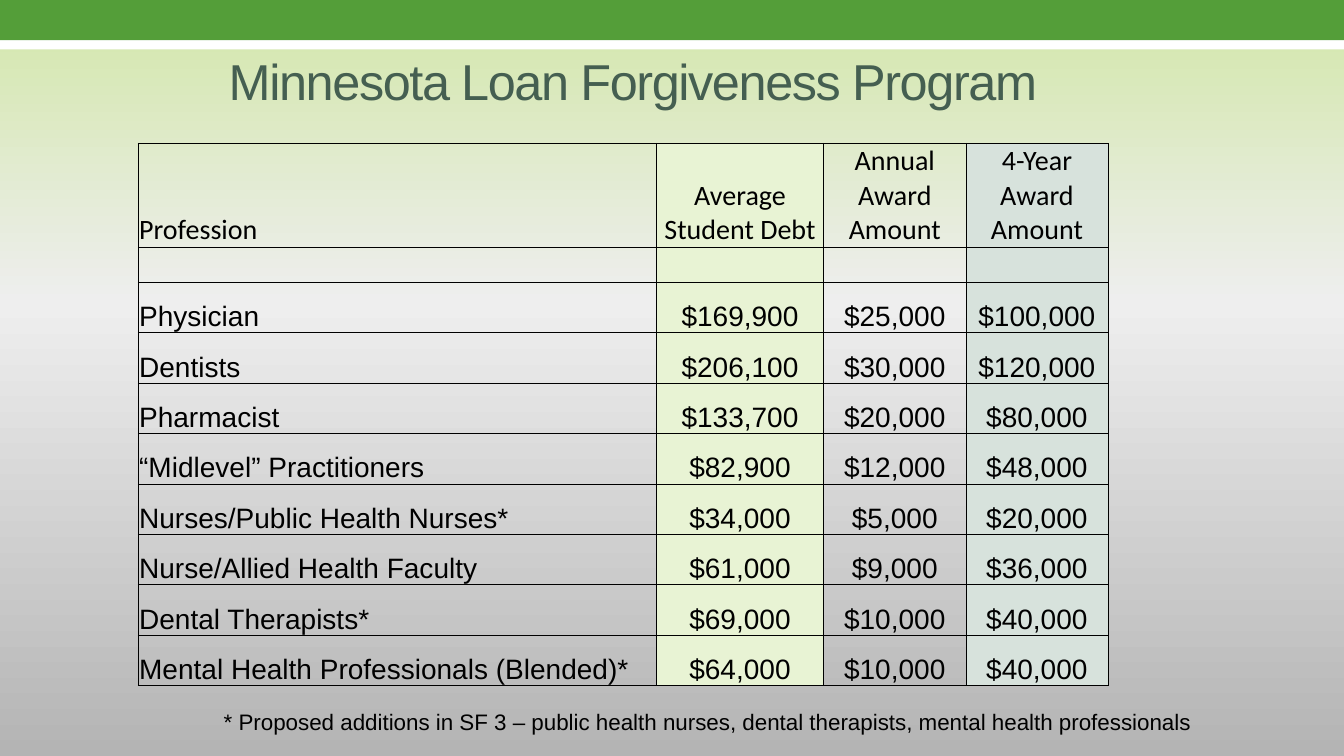
from pptx import Presentation
from pptx import util as u
from pptx.dml.color import RGBColor
from pptx.enum import shapes, text
from pptx.oxml import parse_xml
from pptx.oxml.ns import nsdecls, qn
from copy import deepcopy

BLACK = "000000"
COLUMN_WIDTHS = [5.14, 1.66, 1.41, 1.41]
COLUMN_FILLS = [None, "E8F3D4", None, "D7E2DC"]
HEADER = ["Profession", "Average Student Debt", "Annual\nAward Amount", "4-Year Award Amount"]
AWARDS = [
    ["Physician", "$169,900", "$25,000", "$100,000"],
    ["Dentists", "$206,100", "$30,000", "$120,000"],
    ["Pharmacist", "$133,700", "$20,000", "$80,000"],
    ["“Midlevel” Practitioners", "$82,900", "$12,000", "$48,000"],
    ["Nurses/Public Health Nurses*", "$34,000", "$5,000", "$20,000"],
    ["Nurse/Allied Health Faculty", "$61,000", "$9,000", "$36,000"],
    ["Dental Therapists*", "$69,000", "$10,000", "$40,000"],
    ["Mental Health Professionals (Blended)*", "$64,000", "$10,000", "$40,000"],
]


def color(value):
    return RGBColor.from_string(value)


def set_attributes(target, values):
    for name, value in values.items():
        setattr(target, name, value)


class SlideBuilder:
    def __init__(self, slide, font="Arial"):
        self.slide = slide
        self.font = font

    def background(self, stops):
        """Fill the background from top to bottom with (position, color) stops."""
        fill = self.slide.background.fill
        fill.gradient()
        fill.gradient_angle = 270
        stop_list = next(self.slide.element.iter(qn("a:gsLst")))
        while len(stop_list) < len(stops):
            stop_list.append(deepcopy(stop_list[0]))
        for stop, (position, value) in zip(fill.gradient_stops, stops):
            stop.position = position
            stop.color.rgb = color(value)

    def band(self, top, height, fill):
        shape = self.slide.shapes.add_shape(
            shapes.MSO_SHAPE.RECTANGLE, 0, u.Inches(top), u.Inches(13.33), u.Inches(height))
        shape.shadow.inherit = False
        shape.fill.solid()
        shape.fill.fore_color.rgb = color(fill)
        shape.line.fill.background()

    def fill_text(self, frame, content, size, value=BLACK, font=None, align=text.PP_ALIGN.LEFT):
        frame.text = content
        for paragraph in frame.paragraphs:
            paragraph.alignment = align
            for run in paragraph.runs:
                set_attributes(run.font, {
                    "name": font or self.font, "size": u.Pt(size), "bold": False})
                run.font.color.rgb = color(value)

    def label(self, box, content, size, value=BLACK, anchor=text.MSO_ANCHOR.TOP, spacing=0):
        shape = self.slide.shapes.add_textbox(*map(u.Inches, box))
        set_attributes(shape.text_frame, {"word_wrap": True, "vertical_anchor": anchor})
        self.fill_text(shape.text_frame, content, size, value)
        if spacing:
            for properties in shape.element.iter(qn("a:rPr")):
                properties.set("spc", str(int(spacing * 100)))

    def table(self, left, top, rows, heights):
        frame = self.slide.shapes.add_table(
            len(rows), len(COLUMN_WIDTHS), u.Inches(left), u.Inches(top),
            u.Inches(sum(COLUMN_WIDTHS)), u.Inches(sum(heights)))
        table = frame.table
        set_attributes(table, {"first_row": False, "horz_banding": False})
        for column, width in zip(table.columns, COLUMN_WIDTHS):
            column.width = u.Inches(width)
        for index, (row, height) in enumerate(zip(table.rows, heights)):
            row.height = u.Inches(height)
            for position, cell in enumerate(row.cells):
                self.cell(cell, rows[index][position], COLUMN_FILLS[position],
                          font="Calibri" if index == 0 else self.font,
                          align=text.PP_ALIGN.CENTER if position else text.PP_ALIGN.LEFT)
        for properties in frame.element.iter(qn("a:tcPr")):
            self.borders(properties)

    def cell(self, cell, content, fill, font, align):
        inset = u.Inches(0.01)
        set_attributes(cell, {
            "margin_left": inset, "margin_right": inset, "margin_top": inset,
            "margin_bottom": 0, "vertical_anchor": text.MSO_ANCHOR.BOTTOM})
        self.fill_text(cell.text_frame, content, 20, font=font, align=align)
        if fill:
            cell.fill.solid()
            cell.fill.fore_color.rgb = color(fill)
        else:
            cell.fill.background()

    def borders(self, properties):
        for index, side in enumerate("LRTB"):
            properties.insert(index, parse_xml(
                f'<a:ln{side} {nsdecls("a")} w="{u.Pt(0.5)}"><a:solidFill>'
                f'<a:srgbClr val="{BLACK}"/></a:solidFill></a:ln{side}>'))


def main():
    presentation = Presentation()
    presentation.slide_width = u.Inches(13.33)
    presentation.slide_height = u.Inches(7.5)
    builder = SlideBuilder(presentation.slides.add_slide(presentation.slide_layouts[6]))
    builder.background([(0, "D2E7A9"), (0.4, "EEEEEE"), (1, "B4B4B4")])
    builder.band(0.24, 0.25, "FFFFFF")
    builder.band(0, 0.4, "549E39")
    builder.label((2.17, 0.17, 9, 1.25), "Minnesota Loan Forgiveness Program", 36,
                  "455F51", text.MSO_ANCHOR.MIDDLE, spacing=-1)
    spacer = [""] * len(HEADER)
    builder.table(1.37, 1.42, [HEADER, spacer, *AWARDS], [1.03, 0.35] + [0.5] * len(AWARDS))
    builder.label((2.12, 6.98, 10.27, 0.37),
                  "* Proposed additions in SF 3 – public health nurses, dental therapists, "
                  "mental health professionals", 16)
    presentation.save("out.pptx")


if __name__ == "__main__":
    main()
